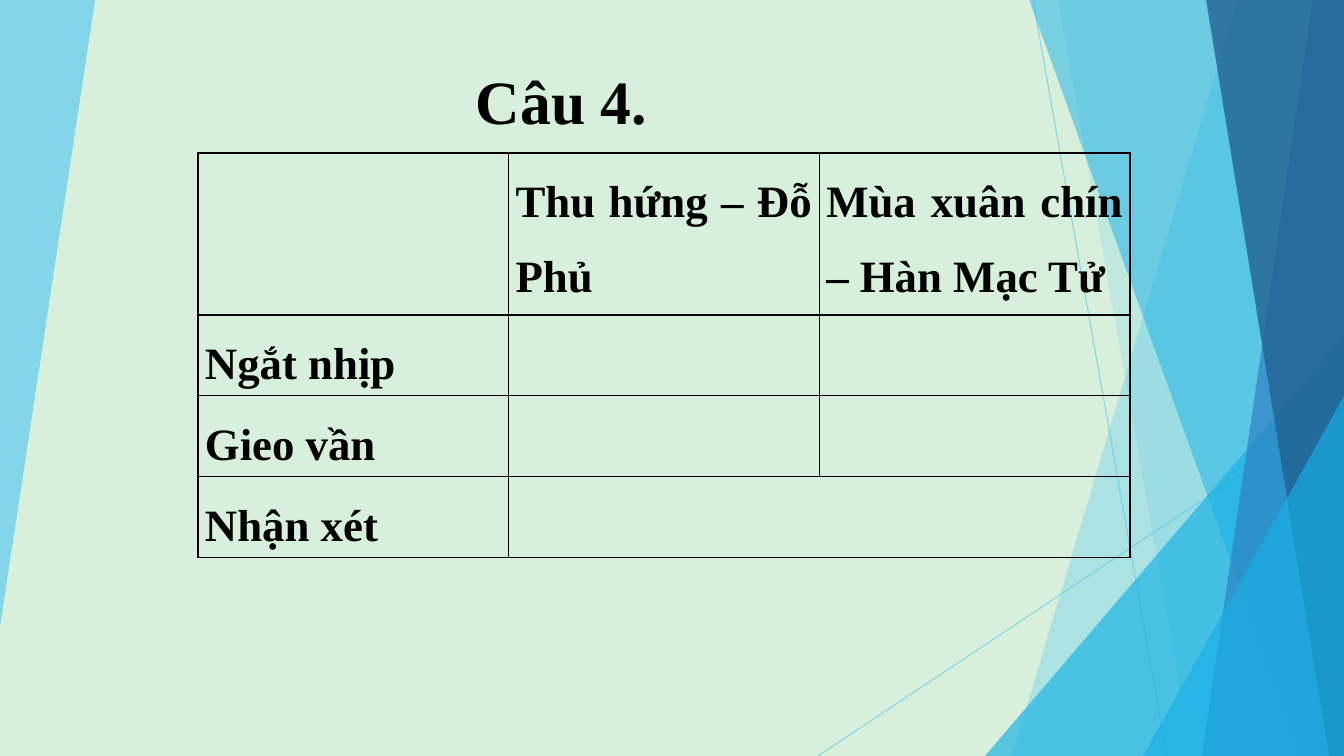
from lxml import etree
from pptx import Presentation
from pptx import util as u
from pptx.dml.color import RGBColor
from pptx.enum import shapes, text
from pptx.oxml import ns

W, H = 1344, 756
SCALE = 914400 / 100.8  # EMU per px
FONT = "Times New Roman"
MINT = RGBColor(0xD8, 0xF0, 0xDB)
BLACK = RGBColor(0, 0, 0)
SKY = RGBColor(0x5F, 0xCB, 0xEF)
CYAN = RGBColor(0x17, 0xB0, 0xE4)
BLUE = RGBColor(0x2E, 0x83, 0xC3)
NAVY = RGBColor(0x22, 0x62, 0x92)


def px(n):
    return u.Emu(round(n * SCALE))


def sub(parent, tag, **attrs):
    return etree.SubElement(parent, ns.qn(tag), attrs)


def set_alpha(fill_parent, percent):
    color = next(fill_parent.iter(ns.qn("a:srgbClr")))
    sub(color, "a:alpha", val=str(percent * 1000))


def paint(sp, color, alpha):
    sp.shadow.inherit = False
    sp.fill.solid()
    sp.fill.fore_color.rgb = color
    set_alpha(sp._element.spPr, alpha)
    sp.line.fill.background()


def polygon(s, points, color, alpha):
    builder = s.shapes.build_freeform(*points[0], scale=SCALE)
    builder.add_line_segments(points[1:], close=True)
    paint(builder.convert_to_shape(), color, alpha)


def corner_triangle(s, x, y, color, alpha):
    sp = s.shapes.add_shape(shapes.MSO_SHAPE.ISOSCELES_TRIANGLE,
                            px(x), px(y), px(W - x), px(H - y))
    sp.adjustments[0] = 1
    paint(sp, color, alpha)


def right_band(s, top_x, bottom_x, color, alpha):
    polygon(s, [(top_x, -1), (W, -1), (W, H), (bottom_x, H)], color, alpha)


def thin_line(s, x1, y1, x2, y2):
    line = s.shapes.add_connector(shapes.MSO_CONNECTOR.STRAIGHT,
                                  px(x1), px(y1), px(x2), px(y2))
    line.line.color.rgb = SKY
    line.line.width = u.Pt(0.75)
    set_alpha(line._element.spPr, 70)
    sub(line._element.spPr, "a:effectLst")


def add_facets(s):
    # Left wedge and crossing lines
    polygon(s, [(0, -1), (95, -1), (95, 1), (0, 627)], SKY, 70)
    thin_line(s, 1033, 0, 1167, H)
    thin_line(s, W, 406, 818, H)
    # Overlapping bands and triangles on the right
    right_band(s, 1238, 1012, SKY, 36)
    right_band(s, 1058, 1192, SKY, 20)
    corner_triangle(s, 985, 336, CYAN, 66)
    right_band(s, 1029, 1301, CYAN, 50)
    right_band(s, 1313, 1202, BLUE, 70)
    right_band(s, 1206, 1329, NAVY, 80)
    corner_triangle(s, 1143, 396, CYAN, 66)


def write(tf, words, size):
    tf.text = words
    p = tf.paragraphs[0]
    p.alignment = text.PP_ALIGN.JUSTIFY
    p.line_spacing = 1.5
    for r in p.runs:
        r.font.name = FONT
        r.font.size = u.Pt(size)
        r.font.bold = True
        r.font.color.rgb = BLACK


def add_title(s, x, y, w, h):
    tf = s.shapes.add_textbox(px(x), px(y), px(w), px(h)).text_frame
    tf.word_wrap = True
    write(tf, "Câu 4.", 44)


def style_cell(cell):
    cell.margin_left = cell.margin_right = px(7)
    cell.margin_top = cell.margin_bottom = 0
    tcPr = cell._tc.get_or_add_tcPr()
    for side in ("a:lnL", "a:lnR", "a:lnT", "a:lnB"):
        ln = sub(tcPr, side, w=str(u.Pt(1)))
        sub(sub(ln, "a:solidFill"), "a:srgbClr", val=str(BLACK))
    cell.fill.background()


def add_comparison(s, x, y, w, row_heights):
    rows = [
        ["", "Thu hứng – Đỗ Phủ", "Mùa xuân chín – Hàn Mạc Tử"],
        ["Ngắt nhịp", "", ""],
        ["Gieo vần", "", ""],
        ["Nhận xét", "", ""],
    ]
    table = s.shapes.add_table(len(rows), 3, px(x), px(y), px(w),
                               px(sum(row_heights))).table
    table.first_row = table.horz_banding = False
    for column in table.columns:
        column.width = px(w / 3)
    for i, (words, height) in enumerate(zip(rows, row_heights)):
        table.rows[i].height = px(height)
        for j, word in enumerate(words):
            cell = table.cell(i, j)
            style_cell(cell)
            if word:
                write(cell.text_frame, word, 32)
    # Remarks share one wide cell
    table.cell(3, 1).merge(table.cell(3, 2))


def main():
    prs = Presentation()
    prs.slide_width, prs.slide_height = px(W), px(H)
    s = prs.slides.add_slide(prs.slide_layouts[6])
    s.background.fill.solid()
    s.background.fill.fore_color.rgb = MINT
    add_facets(s)
    add_title(s, 466, 21, 694, 109)
    add_comparison(s, 198, 153, 932, [162, 80, 81, 81])
    prs.save("out.pptx")


if __name__ == "__main__":
    main()
